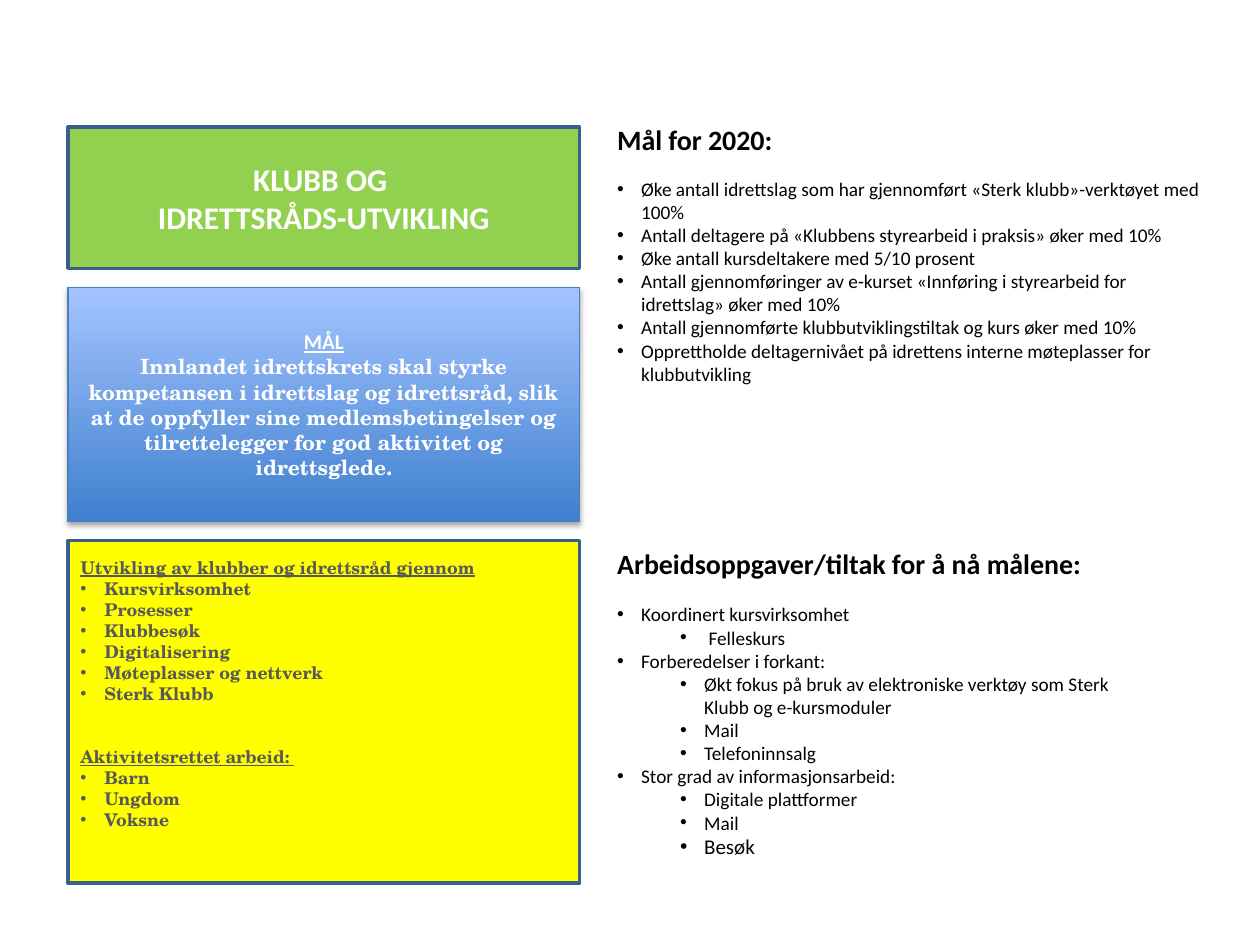
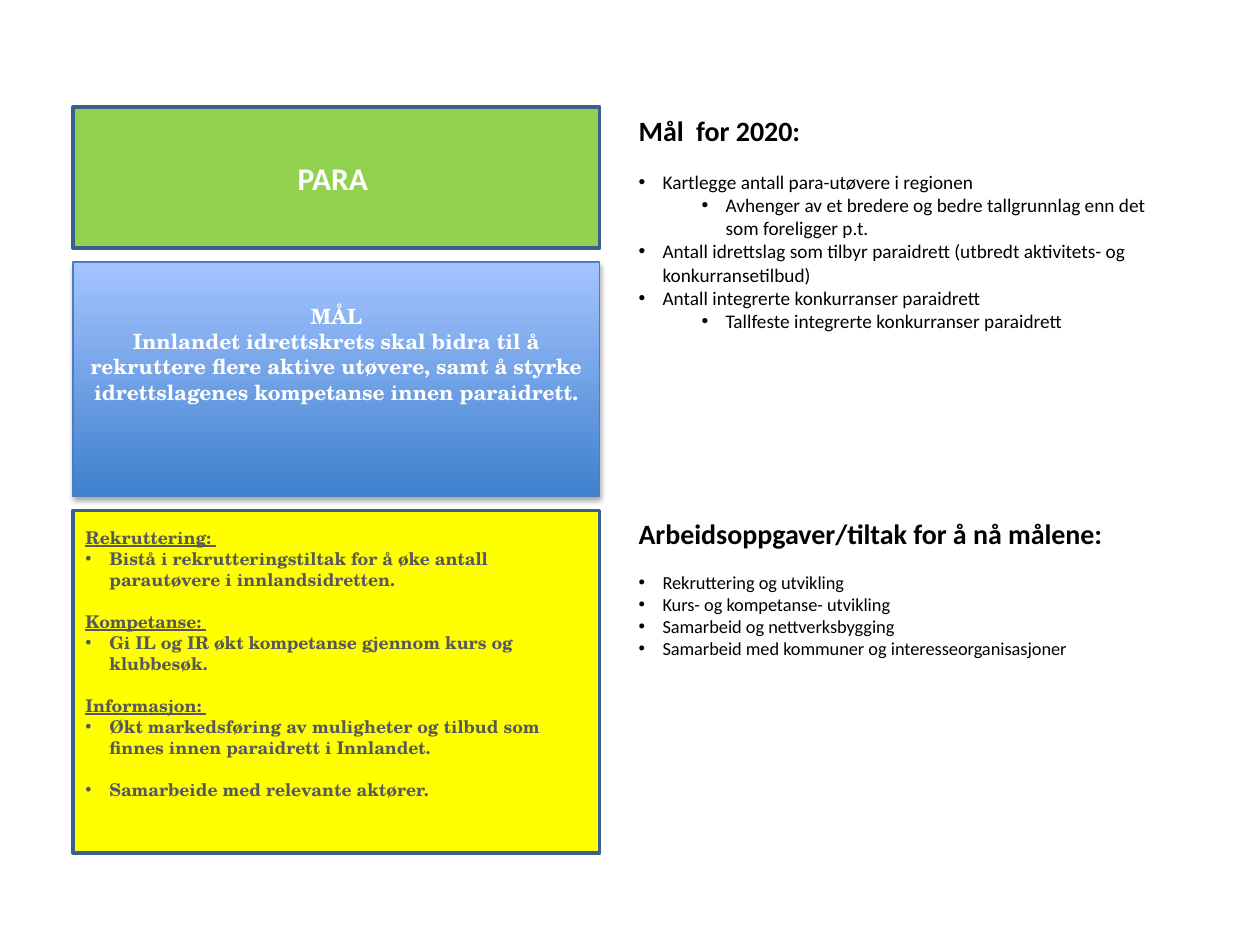
"""Builds two action-plan slides with goal boxes on the left and lists on the right."""
import pptx
import pptx.dml.color
import pptx.enum.shapes
import pptx.enum.text
import pptx.oxml.ns
import pptx.util
from dataclasses import dataclass
from lxml import etree

Inches = pptx.util.Inches
Pt = pptx.util.Pt
Align = pptx.enum.text.PP_ALIGN
Anchor = pptx.enum.text.MSO_ANCHOR
qn = pptx.oxml.ns.qn


@dataclass(frozen=True)
class Theme:
    sans: str = "Calibri"
    serif: str = "TeX Gyre Schola"
    green: str = "92D050"
    yellow: str = "FFFF00"
    border: str = "3A5F8C"
    goal_bottom: str = "3F80CE"
    goal_top: str = "A4C4FF"
    goal_border: str = "4B7EBC"
    white: str = "FFFFFF"
    black: str = "000000"
    grey: str = "57585B"
    banner_size: float = 18
    title_size: float = 16
    goal_size: float = 12
    list_size: float = 11
    focus_size: float = 10


def rgb(value):
    return pptx.dml.color.RGBColor.from_string(value)


class PlanDeck:
    banner_height, goal_height, focus_height = 1.12, 1.86, 2.72

    def __init__(self, theme):
        self.theme = theme
        self.deck = pptx.Presentation()
        self.deck.slide_width, self.deck.slide_height = Inches(10), Inches(7.5)
        self.page = None

    def new_page(self):
        self.page = self.deck.slides.add_slide(self.deck.slide_layouts[6])

    def add_text(self, frame, text, size, color, font=None, bold=False, underline=False, align=Align.LEFT):
        first = frame.paragraphs[0]
        para = frame.add_paragraph() if first.runs else first
        para.add_run().text = text
        para.alignment = align
        para.font.name = font or self.theme.sans
        para.font.size = Pt(size)
        para.font.bold = bold
        para.font.underline = underline
        para.font.color.rgb = rgb(color)
        return para

    def bullet(self, para, level=0):
        para.level = level
        properties = para._p.get_or_add_pPr()
        properties.set("marL", str(Inches(0.19 + 0.5 * level)))
        properties.set("indent", str(Inches(-0.19)))
        etree.SubElement(properties, qn("a:buFont"), typeface="Arial")
        etree.SubElement(properties, qn("a:buChar"), char="•")
        defaults = properties.find(qn("a:defRPr"))
        properties.append(defaults)

    def box(self, left, top, width, height, border, border_width):
        box = self.page.shapes.add_shape(
            pptx.enum.shapes.MSO_SHAPE.RECTANGLE,
            Inches(left), Inches(top), Inches(width), Inches(height))
        box.shadow.inherit = False
        box.line.color.rgb = rgb(border)
        box.line.width = Pt(border_width)
        box.text_frame.word_wrap = True
        box.text_frame.vertical_anchor = Anchor.MIDDLE
        return box

    def solid_box(self, left, top, width, height, fill):
        box = self.box(left, top, width, height, self.theme.border, 2)
        box.fill.solid()
        box.fill.fore_color.rgb = rgb(fill)
        return box

    def banner(self, left, top, width, lines):
        box = self.solid_box(left, top, width, self.banner_height, self.theme.green)
        for line in lines:
            self.add_text(box.text_frame, line, self.theme.banner_size, self.theme.white,
                          bold=True, align=Align.CENTER)

    def goal(self, left, top, width, text, heading_font, underline, bottom_margin):
        theme = self.theme
        box = self.box(left, top, width, self.goal_height, theme.goal_border, 0.75)
        box.fill.gradient()
        box.fill.gradient_angle = 90
        for stop, color in zip(box.fill.gradient_stops, (theme.goal_bottom, theme.goal_top)):
            stop.color.rgb = rgb(color)
        self.drop_shadow(box)
        frame = box.text_frame
        frame.margin_bottom = Inches(bottom_margin)
        self.add_text(frame, "MÅL", theme.goal_size, theme.white, heading_font, True, underline, Align.CENTER)
        self.add_text(frame, text, theme.goal_size, theme.white, theme.serif, True, align=Align.CENTER)

    def drop_shadow(self, box):
        effects = box._element.spPr.find(qn("a:effectLst"))
        shadow = etree.SubElement(effects, qn("a:outerShdw"), blurRad=str(Pt(3.1)),
                                  dist=str(Pt(1.8)), dir="5400000", rotWithShape="0")
        color = etree.SubElement(shadow, qn("a:srgbClr"), val=self.theme.black)
        etree.SubElement(color, qn("a:alpha"), val="35000")

    def focus(self, left, top, width, groups, group_gap):
        theme = self.theme
        frame = self.solid_box(left, top, width, self.focus_height, theme.yellow).text_frame
        frame.vertical_anchor = Anchor.TOP
        frame.margin_top = Inches(0.13)
        for index, (heading, items) in enumerate(groups):
            lines = ([heading] if heading else []) + items
            for position, text in enumerate(lines):
                is_heading = text == heading
                para = self.add_text(frame, text, theme.focus_size, theme.grey, theme.serif, True, is_heading)
                if index and not position:
                    para.space_before = Pt(group_gap)
                if not is_heading:
                    self.bullet(para)

    def column(self, left, top, width, gap, focus_gap, banner, goal, focus):
        goal_top = top + self.banner_height + gap
        focus_top = goal_top + self.goal_height + gap
        self.focus(left, focus_top, width, focus, focus_gap)
        self.banner(left, top, width, banner)
        self.goal(left, goal_top, width, *goal)

    def listing(self, left, top, width, height, title, gap, items, size=None):
        theme = self.theme
        box = self.page.shapes.add_textbox(Inches(left), Inches(top), Inches(width), Inches(height))
        frame = box.text_frame
        frame.word_wrap = True
        frame.auto_size = pptx.enum.text.MSO_AUTO_SIZE.SHAPE_TO_FIT_TEXT
        para = self.add_text(frame, title, theme.title_size, theme.black, bold=True)
        para.space_after = Pt(gap)
        for level, text, *own_size in items:
            item_size = own_size[0] if own_size else size or theme.list_size
            self.bullet(self.add_text(frame, text, item_size, theme.black), level)


TASKS_TITLE = "Arbeidsoppgaver/tiltak for å nå målene:"


def club_page(plan):
    plan.new_page()
    plan.column(
        0.54, 1.01, 4.06, 0.15, 24,
        ["KLUBB OG ", "IDRETTSRÅDS-UTVIKLING"],
        ("Innlandet idrettskrets skal styrke kompetansen i idrettslag og idrettsråd, slik at de "
         "oppfyller sine medlemsbetingelser og tilrettelegger for god aktivitet og idrettsglede.",
         plan.theme.sans, True, 0.05),
        [("Utvikling av klubber og idrettsråd gjennom",
          ["Kursvirksomhet", "Prosesser", "Klubbesøk", "Digitalisering",
           "Møteplasser og nettverk", "Sterk Klubb"]),
         ("Aktivitetsrettet arbeid: ", ["Barn", "Ungdom", "Voksne"])])
    plan.listing(4.8, 0.92, 4.86, 2.59, "Mål for 2020:", 12.2, [
        (0, "Øke antall idrettslag som har gjennomført «Sterk klubb»-verktøyet med 100%"),
        (0, "Antall deltagere på «Klubbens styrearbeid i praksis» øker med 10%"),
        (0, "Øke antall kursdeltakere med 5/10 prosent"),
        (0, "Antall gjennomføringer av e-kurset «Innføring i styrearbeid for idrettslag» øker med 10%"),
        (0, "Antall gjennomførte klubbutviklingstiltak og kurs øker med 10%"),
        (0, "Opprettholde deltagernivået på idrettens interne møteplasser for klubbutvikling")])
    plan.listing(4.8, 4.29, 4.39, 2.6, TASKS_TITLE, 12.8, [
        (0, "Koordinert kursvirksomhet"),
        (1, " Felleskurs"),
        (0, "Forberedelser i forkant:"),
        (1, "Økt fokus på bruk av elektroniske verktøy som Sterk Klubb og e-kursmoduler"),
        (1, "Mail"),
        (1, "Telefoninnsalg"),
        (0, "Stor grad av informasjonsarbeid:"),
        (1, "Digitale plattformer"),
        (1, "Mail"),
        (1, "Besøk", 12)])


def para_sport_page(plan):
    plan.new_page()
    plan.column(
        0.58, 0.85, 4.18, 0.11, 12,
        ["PARA "],
        ("Innlandet idrettskrets skal bidra til å rekruttere flere aktive utøvere, samt å styrke "
         "idrettslagenes kompetanse innen paraidrett.",
         plan.theme.serif, False, 0.45),
        [("Rekruttering: ",
          ["Bistå i rekrutteringstiltak for å øke antall parautøvere i innlandsidretten."]),
         ("Kompetanse: ", ["Gi IL og IR økt kompetanse gjennom kurs og klubbesøk."]),
         ("Informasjon: ",
          ["Økt markedsføring av muligheter og tilbud som finnes innen paraidrett i Innlandet."]),
         (None, ["Samarbeide med relevante aktører."])])
    plan.listing(4.97, 0.85, 4.31, 1.85, "Mål  for 2020:", 13.4, [
        (0, "Kartlegge antall para-utøvere i regionen"),
        (1, "Avhenger av et bredere og bedre tallgrunnlag enn det som foreligger p.t."),
        (0, "Antall idrettslag som tilbyr paraidrett (utbredt aktivitets- og konkurransetilbud)"),
        (0, "Antall integrerte konkurranser paraidrett"),
        (1, "Tallfeste integrerte konkurranser paraidrett")])
    plan.listing(4.97, 4.05, 3.97, 1.61, TASKS_TITLE, 12.2, [
        (0, "Rekruttering og utvikling"),
        (0, "Kurs- og kompetanse- utvikling"),
        (0, "Samarbeid og nettverksbygging"),
        (0, "Samarbeid med kommuner og interesseorganisasjoner")], size=10.5)


def main():
    plan = PlanDeck(Theme())
    club_page(plan)
    para_sport_page(plan)
    plan.deck.save("out.pptx")


if __name__ == "__main__":
    main()
